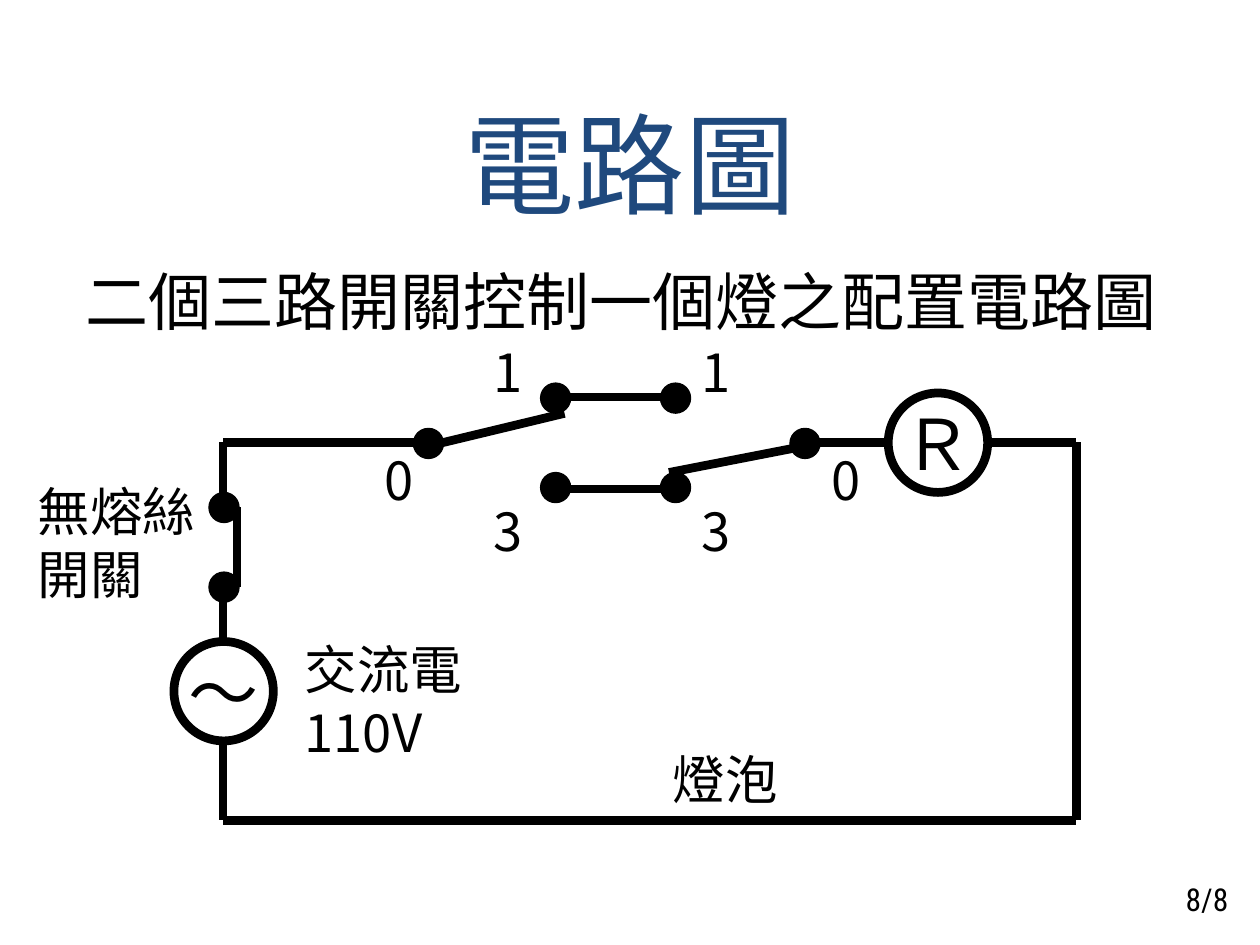
from lxml.etree import SubElement
from pptx import Presentation
from pptx.dml.color import RGBColor
from pptx.enum.shapes import MSO_CONNECTOR as Conn, MSO_SHAPE as Shape
from pptx.enum.text import MSO_ANCHOR as Anchor, PP_ALIGN as Align
from pptx.oxml.ns import qn
from pptx.util import Pt

CJK, LATIN, SMALL = "Noto Sans CJK JP", "Calibri", "Roboto Condensed"
BLACK, NAVY = "000000", "1F497D"

# Circuit grid, in points
LEFT, RIGHT, TOP, BASE = 127.5, 615, 252.7, 468.7
MID1, MID2 = 317.5, 386          # inner contacts of the two switches
HIGH, LOW = 227.5, 278.6         # upper and lower contact rows
POLE1, POLE2 = 244.8, 460        # common contacts
FUSE1, FUSE2 = 290, 335.5        # breaker contacts
LAMP, POWER = (536, 253), (127.8, 395)
RAD, DOT = 28.4, 8.6

# Content
WIRES = [
    (LEFT, TOP, 241.2, TOP),
    (LEFT, TOP, LEFT, 287.3),
    (LEFT, 338.4, LEFT, POWER[1] - RAD),
    (LEFT, POWER[1] + RAD, LEFT, BASE),
    (LEFT, BASE, RIGHT, BASE),
    (RIGHT, TOP, RIGHT, BASE),
    (462.2, TOP, LAMP[0] - RAD, TOP),
    (LAMP[0] + RAD, TOP, RIGHT, TOP),
    (MID1, 226.8, MID2, 226.8),
    (MID1, 279.4, MID2, 279.4),
    (322.6, 236.2, POLE1, 254.9),
    (382.3, 270, POLE2, 254.9),
    (135.4, FUSE2, 135.4, FUSE1),
]
DOTS = [(x, y) for y in (HIGH, LOW) for x in (MID1, MID2)]
DOTS += [(x, 253.4) for x in (POLE1, POLE2)]
DOTS += [(128, y) for y in (FUSE1, FUSE2)]
RINGS = [(LAMP, "Ｒ"), (POWER, "～")]
LABELS = [
    (["交流電", "110V"], 167, 360.7, 104.4, 79.2),
    (["無熔絲", "開關"], 14.4, 270, 104.4, 79.2),
    (["燈泡"], 377.3, 423.4, 74.2, 43.2),
    (["0"], 212.4, 252.7, 29.5, 43.2),
    (["0"], 468, 252.7, 29.5, 43.2),
]
LABELS += [([t], x, y, 29.5, 43.2)
           for t, y in (("1", 190.8), ("3", 281.5)) for x in (275, 393.8)]


def rgb(code):
    return RGBColor.from_string(code)


def write(frame, lines, size, font, color=BLACK, align=Align.LEFT):
    for i, line in enumerate(lines):
        para = frame.add_paragraph() if i else frame.paragraphs[0]
        para.alignment = align
        run = para.add_run()
        run.text = line
        run.font.size = Pt(size)
        run.font.name = font
        run.font.color.rgb = rgb(color)
        SubElement(run.font._element, qn("a:ea"), typeface=CJK)


def box(x, y, w, h, wrap=True):
    frame = slide.shapes.add_textbox(Pt(x), Pt(y), Pt(w), Pt(h)).text_frame
    frame.word_wrap = wrap
    return frame


def wire(x1, y1, x2, y2):
    line = slide.shapes.add_connector(
        Conn.STRAIGHT, Pt(x1), Pt(y1), Pt(x2), Pt(y2))
    line.line.color.rgb = rgb(BLACK)
    line.line.width = Pt(5)
    SubElement(line._element.spPr, qn("a:effectLst"))


def disc(x, y, r, width):
    shape = slide.shapes.add_shape(
        Shape.OVAL, Pt(x - r), Pt(y - r), Pt(2 * r), Pt(2 * r))
    shape.shadow.inherit = False
    shape.line.color.rgb = rgb(BLACK)
    shape.line.width = Pt(width)
    return shape


deck = Presentation()
deck.slide_width, deck.slide_height = Pt(720), Pt(540)
slide = deck.slides.add_slide(deck.slide_layouts[5])

# Title and subtitle
title = slide.shapes.title
title.left, title.top, title.width, title.height = Pt(36), Pt(48), Pt(648), Pt(90)
title.text_frame.vertical_anchor = Anchor.MIDDLE
write(title.text_frame, ["電路圖"], 63, LATIN, NAVY, Align.CENTER)

sub = box(31, 151.2, 648, 45.4)
write(sub, ["二個三路開關控制一個燈之配置電路圖"], 36, LATIN, align=Align.CENTER)
sub.paragraphs[0].line_spacing = 0.9
sub.paragraphs[0].space_before = Pt(7.2)

# Wires, contacts and devices
for ends in WIRES:
    wire(*ends)
for x, y in DOTS:
    dot = disc(x, y, DOT, 0.75)
    dot.fill.solid()
    dot.fill.fore_color.rgb = rgb(BLACK)
for (x, y), sign in RINGS:
    ring = disc(x, y, RAD, 5)
    ring.fill.background()
    ring.text_frame.word_wrap = False
    ring.text_frame.vertical_anchor = Anchor.MIDDLE
    write(ring.text_frame, [sign], 40, LATIN, align=Align.CENTER)

# Labels and page number
for lines, *area in LABELS:
    write(box(*area, wrap=False), lines, 30, CJK)

page = box(677.5, 502.6, 31.7, 21.6)
page.margin_left = page.margin_right = page.margin_top = page.margin_bottom = 0
write(page, ["8/8"], 18, SMALL)

deck.save("out.pptx")
